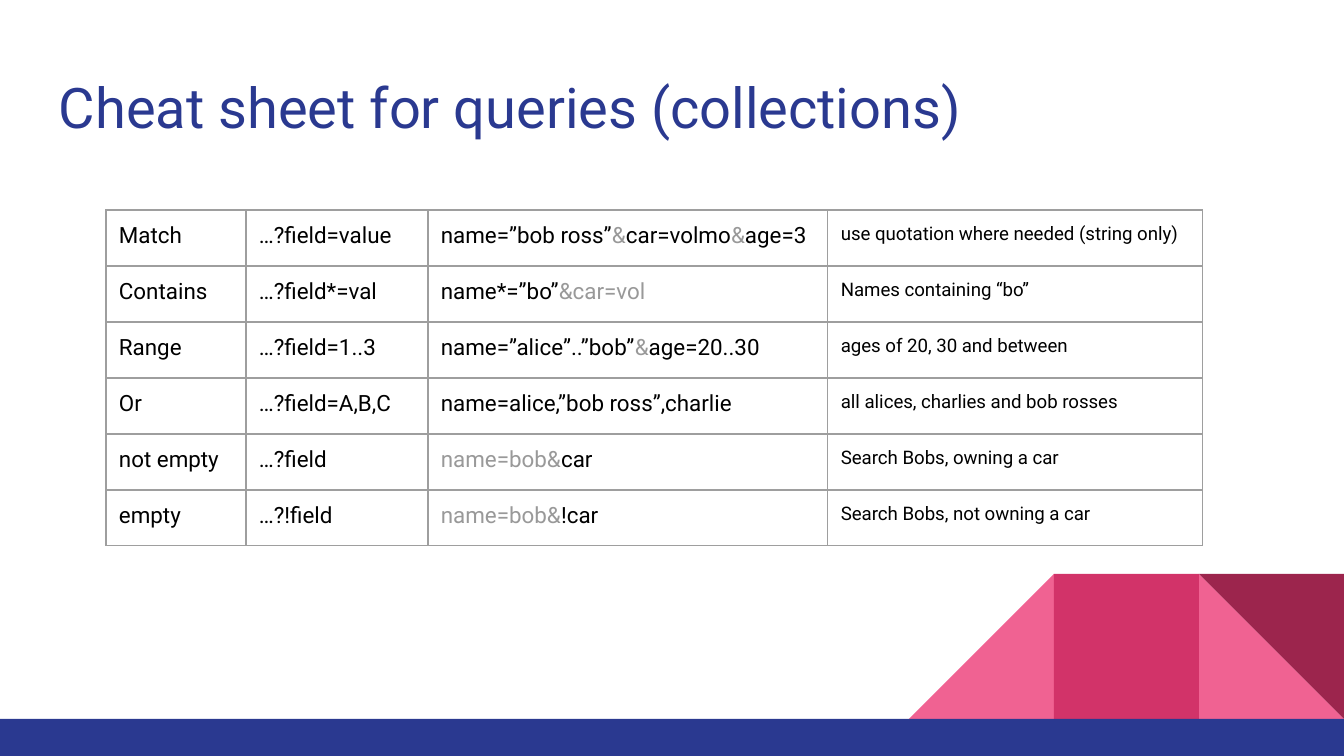
from lxml.etree import SubElement
from pptx import Presentation
from pptx.dml.color import RGBColor
from pptx.enum.shapes import MSO_SHAPE as Shape
from pptx.enum.text import MSO_ANCHOR as Anchor
from pptx.oxml.ns import qn
from pptx.util import Pt

EMU_PER_PX = 914400 / 134.4
FONT = "Roboto"
NAVY, PINK, ROSE, WINE = "2A3990", "F06292", "D23369", "9C254D"
BLACK, GRAY, BORDER = "000000", "999999", "9E9E9E"
INSET = 13

COLUMN_WIDTHS = [140, 182, 400, 375]
ROW_HEIGHT = 56
# Each row: name, pattern, example as (text, colour) runs, explanation
QUERIES = [
    ("Match", "…?field=value",
     [("name=”bob ross”", BLACK), ("&", GRAY), ("car=volmo", BLACK), ("&", GRAY), ("age=3", BLACK)],
     "use quotation where needed (string only)"),
    ("Contains", "…?field*=val",
     [("name*=”bo”", BLACK), ("&car=vol", GRAY)],
     "Names containing “bo”"),
    ("Range", "…?field=1..3",
     [("name=”alice”..”bob”", BLACK), ("&", GRAY), ("age=20..30", BLACK)],
     "ages of 20, 30 and between"),
    ("Or", "…?field=A,B,C",
     [("name=alice,”bob ross”,charlie", BLACK)],
     "all alices, charlies and bob rosses"),
    ("not empty", "…?field",
     [("name=bob&", GRAY), ("car", BLACK)],
     "Search Bobs, owning a car"),
    ("empty", "…?!field",
     [("name=bob&", GRAY), ("!car", BLACK)],
     "Search Bobs, not owning a car"),
]


def px(length):
    return round(length * EMU_PER_PX)


def rgb(value):
    return RGBColor.from_string(value)


def add_runs(paragraph, runs, size):
    for text, color in runs:
        run = paragraph.add_run()
        run.text = text
        run.font.name = FONT
        run.font.size = Pt(size)
        run.font.color.rgb = rgb(color)


def set_insets(target):
    target.margin_left = target.margin_right = px(INSET)
    target.margin_top = target.margin_bottom = px(INSET)


def add_block(slide, kind, left, top, width, height, color):
    shape = slide.shapes.add_shape(kind, px(left), px(top), px(width), px(height))
    shape.shadow.inherit = False
    shape.fill.solid()
    shape.fill.fore_color.rgb = rgb(color)
    shape.line.fill.background()
    return shape


def set_borders(cell):
    properties = cell._tc.get_or_add_tcPr()
    for position, side in enumerate(("a:lnL", "a:lnR", "a:lnT", "a:lnB")):
        line = properties.makeelement(qn(side), {"w": str(Pt(0.75))})
        fill = SubElement(line, qn("a:solidFill"))
        SubElement(fill, qn("a:srgbClr"), val=BORDER)
        properties.insert(position, line)


def add_decoration(slide, left, top, side):
    """Three square tiles in a row, the outer ones cut into triangles."""
    middle, right = left + side, left + 2 * side
    add_block(slide, Shape.RIGHT_TRIANGLE, right, top, side, side, PINK)
    slope = add_block(slide, Shape.RIGHT_TRIANGLE, left, top, side, side, PINK)
    slope._element.spPr.get_or_add_xfrm().set("flipH", "1")
    add_block(slide, Shape.RECTANGLE, middle, top, side, side, ROSE)
    corner = add_block(slide, Shape.RIGHT_TRIANGLE, right, top, side, side, WINE)
    corner.rotation = 180


def add_title(slide, left, top, width, height, text):
    box = slide.shapes.add_textbox(px(left), px(top), px(width), px(height))
    frame = box.text_frame
    frame.word_wrap = True
    frame.vertical_anchor = Anchor.TOP
    set_insets(frame)
    add_runs(frame.paragraphs[0], [(text, NAVY)], 30)


def add_query_table(slide, left, top):
    frame = slide.shapes.add_table(
        len(QUERIES), len(COLUMN_WIDTHS), px(left), px(top),
        px(sum(COLUMN_WIDTHS)), px(ROW_HEIGHT * len(QUERIES)))
    table = frame.table
    table.first_row = table.horz_banding = False
    for column, width in zip(table.columns, COLUMN_WIDTHS):
        column.width = px(width)
    for row, (name, pattern, example, explanation) in enumerate(QUERIES):
        table.rows[row].height = px(ROW_HEIGHT)
        contents = [([(name, BLACK)], 12), ([(pattern, BLACK)], 12),
                    (example, 12), ([(explanation, BLACK)], 10)]
        for column, (runs, size) in enumerate(contents):
            cell = table.cell(row, column)
            cell.fill.background()
            set_insets(cell)
            set_borders(cell)
            add_runs(cell.text_frame.paragraphs[0], runs, size)


def main():
    presentation = Presentation()
    presentation.slide_width, presentation.slide_height = px(1344), px(756)
    slide = presentation.slides.add_slide(presentation.slide_layouts[6])

    # Corner decoration and footer band
    add_decoration(slide, 909, 574, 145)
    add_block(slide, Shape.RECTANGLE, 0, 719, 1344, 37, NAVY)

    # Title and query table
    add_title(slide, 46, 60, 1252, 89, "Cheat sheet for queries (collections)")
    add_query_table(slide, 106, 210)

    presentation.save("out.pptx")


if __name__ == "__main__":
    main()
